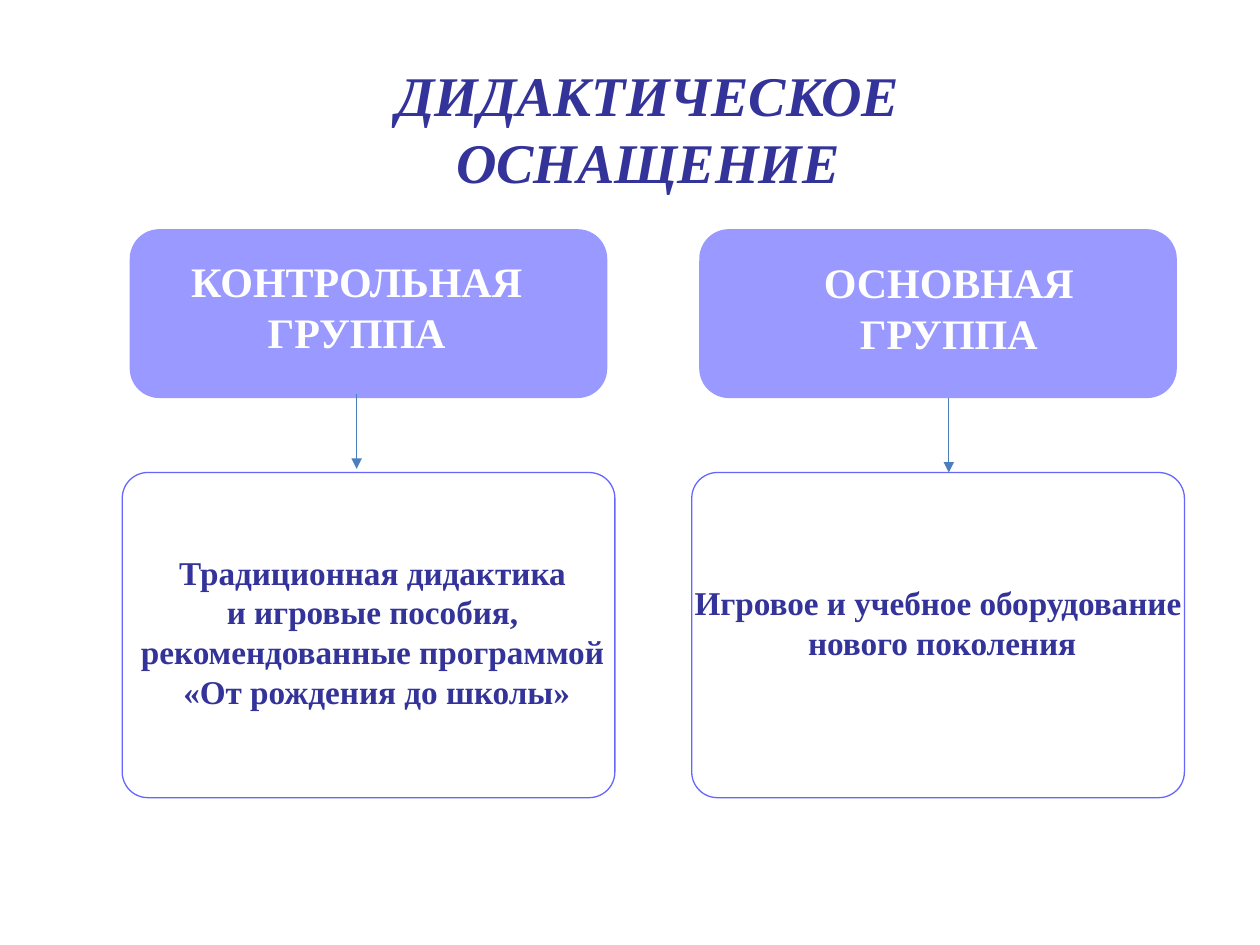
"""Build a slide comparing the teaching equipment of two groups."""
from lxml import etree
from pptx import Presentation
from pptx.dml.color import RGBColor
from pptx.enum.shapes import MSO_CONNECTOR as Connector, MSO_SHAPE as Shape
from pptx.enum.text import MSO_ANCHOR as Anchor, MSO_AUTO_SIZE as AutoSize, PP_ALIGN as Align
from pptx.oxml.ns import qn
from pptx.util import Pt

FONT = "Times New Roman"
NAVY, WHITE, LILAC, VIOLET, BLUE = "333399", "FFFFFF", "9999FF", "6666FF", "4B7EBC"
TITLE = "ДИДАКТИЧЕСКОЕ ОСНАЩЕНИЕ"
COLUMNS = [
    {
        "left": 69.84,
        "heading": "КОНТРОЛЬНАЯ ГРУППА",
        "heading_at": (78.5, 142.6, 250.6, 65.5),
        "body": ["Традиционная дидактика ", "и игровые пособия, ",
                 "рекомендованные программой ", "«От рождения до школы»"],
        "body_at": (71.3, 311.8, 288, 99.4),
        "arrow": (203.8, 225.4),
    },
    {
        "left": 395.28,
        "heading": "ОСНОВНАЯ ГРУППА",
        "heading_at": (416.9, 143.3, 250.6, 65.5),
        "body": ["Игровое и учебное оборудование", " нового поколения"],
        "body_at": (388.1, 329, 295.9, 53.3),
        "arrow": (542.2, 227.5),
    },
]
HEAD_TOP, HEAD_WIDTH, HEAD_HEIGHT = 131, 272.9, 96.5
BODY_TOP, BODY_WIDTH, BODY_HEIGHT = 270, 281.5, 185.8
ARROW_LENGTH = 42.5


def color(value):
    return RGBColor.from_string(value)


def add_panel(page, place, rounding, fill, line=None):
    panel = page.shapes.add_shape(Shape.ROUNDED_RECTANGLE, *map(Pt, place))
    panel.adjustments[0] = rounding
    panel.shadow.inherit = False
    panel.fill.solid()
    panel.fill.fore_color.rgb = color(fill)
    if line:
        panel.line.color.rgb = color(line)
        panel.line.width = Pt(0.75)
    else:
        panel.line.fill.background()


def add_text(page, place, lines, size, ink, italic=None, wrap=True, grow=True):
    box = page.shapes.add_textbox(*map(Pt, place))
    frame = box.text_frame
    frame.text = "\n".join(lines)
    frame.word_wrap = wrap
    frame.auto_size = AutoSize.SHAPE_TO_FIT_TEXT if grow else AutoSize.NONE
    frame.vertical_anchor = Anchor.TOP if grow else Anchor.MIDDLE
    for para in frame.paragraphs:
        para.alignment = Align.CENTER
        for span in para.runs:
            span.font.name = FONT
            span.font.size = Pt(size)
            span.font.bold = True
            span.font.italic = italic
            span.font.color.rgb = color(ink)


def add_arrow(page, x, top):
    arrow = page.shapes.add_connector(
        Connector.STRAIGHT, Pt(x), Pt(top), Pt(x), Pt(top + ARROW_LENGTH))
    arrow.line.color.rgb = color(BLUE)
    arrow.line.width = Pt(0.75)
    etree.SubElement(arrow.line._get_or_add_ln(), qn("a:tailEnd"), type="triangle")
    etree.SubElement(arrow._element.spPr, qn("a:effectLst"))


def main():
    deck = Presentation()
    deck.slide_width, deck.slide_height = Pt(720), Pt(540)
    page = deck.slides.add_slide(deck.slide_layouts[6])
    add_text(page, (118, 15, 504.7, 116), [TITLE], 32, NAVY, italic=True, grow=False)
    for column in COLUMNS:
        left = column["left"]
        head_left = left + (BODY_WIDTH - HEAD_WIDTH) / 2
        add_panel(page, (left, BODY_TOP, BODY_WIDTH, BODY_HEIGHT), 0.079, WHITE, VIOLET)
        add_panel(page, (head_left, HEAD_TOP, HEAD_WIDTH, HEAD_HEIGHT), 0.175, LILAC)
        add_text(page, column["heading_at"], [column["heading"]], 24, WHITE)
        add_text(page, column["body_at"], column["body"], 19, NAVY, wrap=False)
        add_arrow(page, *column["arrow"])
    deck.save("out.pptx")


if __name__ == "__main__":
    main()
